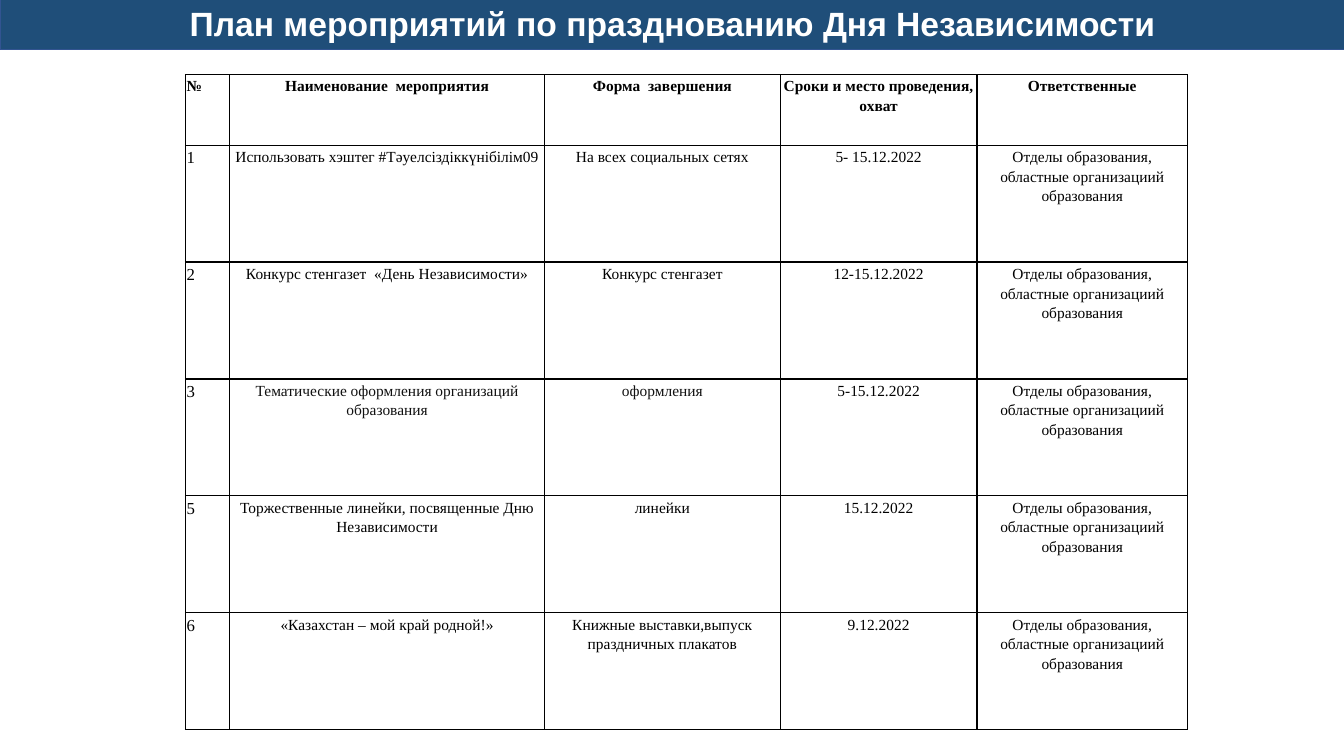
"""Build the slide with the Independence Day events plan."""
from dataclasses import astuple, dataclass

from lxml import etree
from pptx import Presentation
from pptx.dml.color import RGBColor
from pptx.enum.shapes import MSO_SHAPE
from pptx.enum.text import MSO_ANCHOR, PP_ALIGN
from pptx.oxml.ns import qn
from pptx.util import Inches, Pt

RECTANGLE = MSO_SHAPE.RECTANGLE
MIDDLE = MSO_ANCHOR.MIDDLE
LEFT, CENTER = PP_ALIGN.LEFT, PP_ALIGN.CENTER

BLACK, CHARCOAL = "000000", "111111"
BODY_FONT = "Times New Roman"
COLUMN_WIDTHS = [0.44, 3.12, 2.34, 1.95, 2.09]
HEADER_HEIGHT, EVENT_HEIGHT = 0.7, 1.16
BORDERS = ("a:lnL", "a:lnR", "a:lnT", "a:lnB")
CELL_FORMAT = {f"margin_{side}": Inches(0.01) for side in ("left", "right", "top", "bottom")}
TABLE_FORMAT = {"first_row": False, "horz_banding": False}


@dataclass(frozen=True)
class Event:
    number: str
    name: str
    outcome: str
    dates: str
    responsible: str = "Отделы образования, областные организациий образования"


HEADINGS = Event("№", "Наименование  мероприятия", "Форма  завершения",
                 "Сроки и место проведения, охват", "Ответственные")
EVENTS = [
    Event("1", "Использовать хэштег #Тәуелсіздіккүнібілім09",
          "На всех социальных сетях", "5- 15.12.2022"),
    Event("2", "Конкурс стенгазет  «День Независимости»",
          "Конкурс стенгазет", "12-15.12.2022"),
    Event("3", "Тематические оформления организаций образования",
          "оформления", "5-15.12.2022"),
    Event("5", "Торжественные линейки, посвященные Дню Независимости",
          "линейки", "15.12.2022"),
    Event("6", "«Казахстан – мой край родной!»",
          "Книжные выставки,выпуск праздничных плакатов", "9.12.2022"),
]


def rgb(value: str) -> RGBColor:
    return RGBColor.from_string(value)


def apply_format(target, values: dict) -> None:
    for attribute, value in values.items():
        setattr(target, attribute, value)


def write_text(frame, text: str, color: str, paragraph_format: dict, font_format: dict) -> None:
    paragraph = frame.paragraphs[0]
    apply_format(paragraph, paragraph_format)
    run = paragraph.add_run()
    run.text = text
    apply_format(run.font, font_format)
    run.font.color.rgb = rgb(color)


def add_borders(cell) -> None:
    properties = cell._tc.get_or_add_tcPr()
    for position, tag in enumerate(BORDERS):
        border = etree.Element(qn(tag), w=str(Pt(1)))
        fill = etree.SubElement(border, qn("a:solidFill"))
        etree.SubElement(fill, qn("a:srgbClr"), val=BLACK)
        properties.insert(position, border)


def add_banner(slide, title: str) -> None:
    banner = slide.shapes.add_shape(RECTANGLE, 0, Inches(-0.03), Inches(13.34), Inches(0.52))
    banner.shadow.inherit = False
    banner.fill.solid()
    banner.fill.fore_color.rgb = rgb("1F4E79")
    banner.line.color.rgb = rgb("325491")
    banner.line.width = Pt(1)
    apply_format(banner.text_frame, {"word_wrap": True, "vertical_anchor": MIDDLE})
    write_text(banner.text_frame, title, "FFFFFF", {"alignment": CENTER},
               {"name": "Arial", "size": Pt(24), "bold": True})


def fill_cell(cell, text: str, row: int, column: int) -> None:
    apply_format(cell, CELL_FORMAT)
    cell.fill.background()
    add_borders(cell)
    is_heading, is_number = row == 0, column == 0
    color = CHARCOAL if row == 3 and column in (1, 2) else BLACK
    write_text(
        cell.text_frame, text, color,
        {"alignment": LEFT if is_number else CENTER, "line_spacing": 1.15},
        {"name": BODY_FONT, "bold": is_heading,
         "size": Pt(12 if is_number and not is_heading else 11)},
    )


def add_plan(slide, plan: list[Event]) -> None:
    heights = [HEADER_HEIGHT] + [EVENT_HEIGHT] * (len(plan) - 1)
    table = slide.shapes.add_table(
        len(plan), len(COLUMN_WIDTHS), Inches(1.84), Inches(0.74),
        Inches(sum(COLUMN_WIDTHS)), Inches(sum(heights))).table
    apply_format(table, TABLE_FORMAT)
    for column, width in zip(table.columns, COLUMN_WIDTHS):
        column.width = Inches(width)
    for row, (event, height) in enumerate(zip(plan, heights)):
        table.rows[row].height = Inches(height)
        for column, text in enumerate(astuple(event)):
            fill_cell(table.cell(row, column), text, row, column)


def main() -> None:
    presentation = Presentation()
    apply_format(presentation, {"slide_width": Inches(13.33), "slide_height": Inches(7.5)})
    slide = presentation.slides.add_slide(presentation.slide_layouts[6])
    add_banner(slide, "План мероприятий по празднованию Дня Независимости")
    add_plan(slide, [HEADINGS, *EVENTS])
    presentation.save("out.pptx")


if __name__ == "__main__":
    main()
